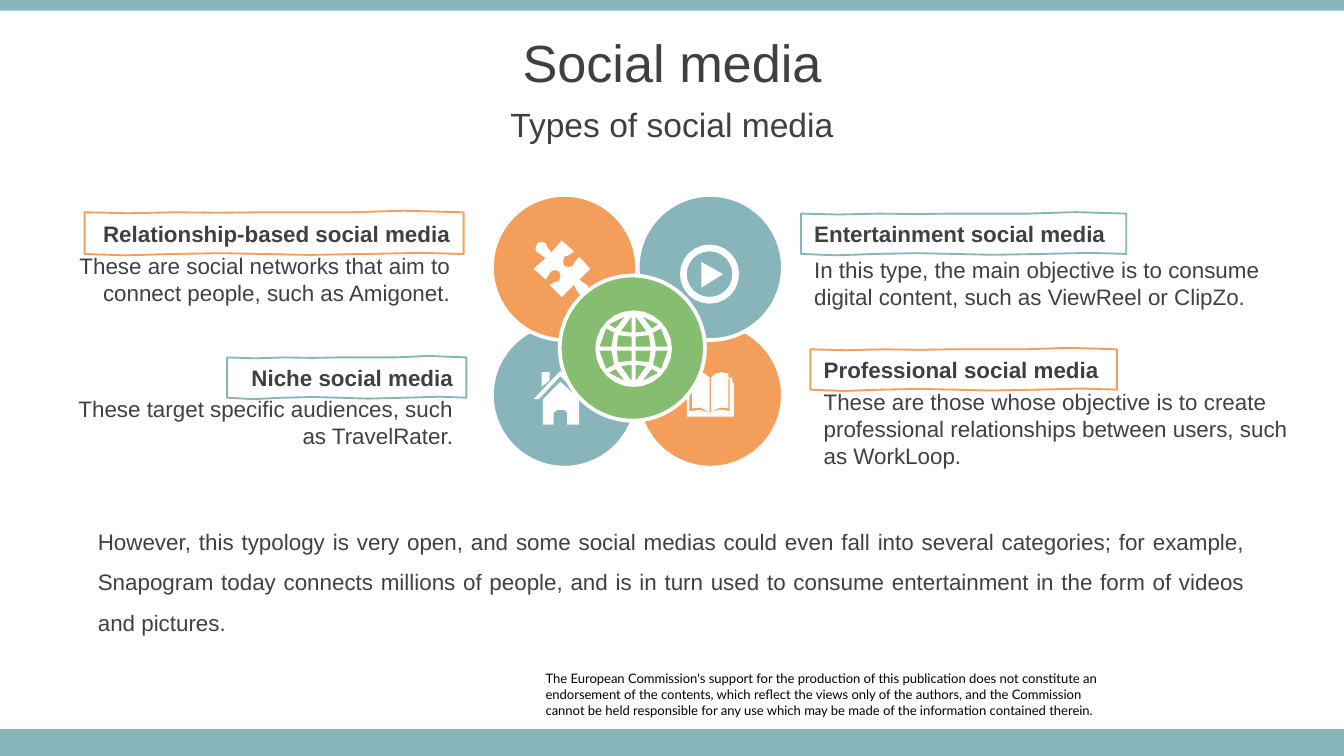
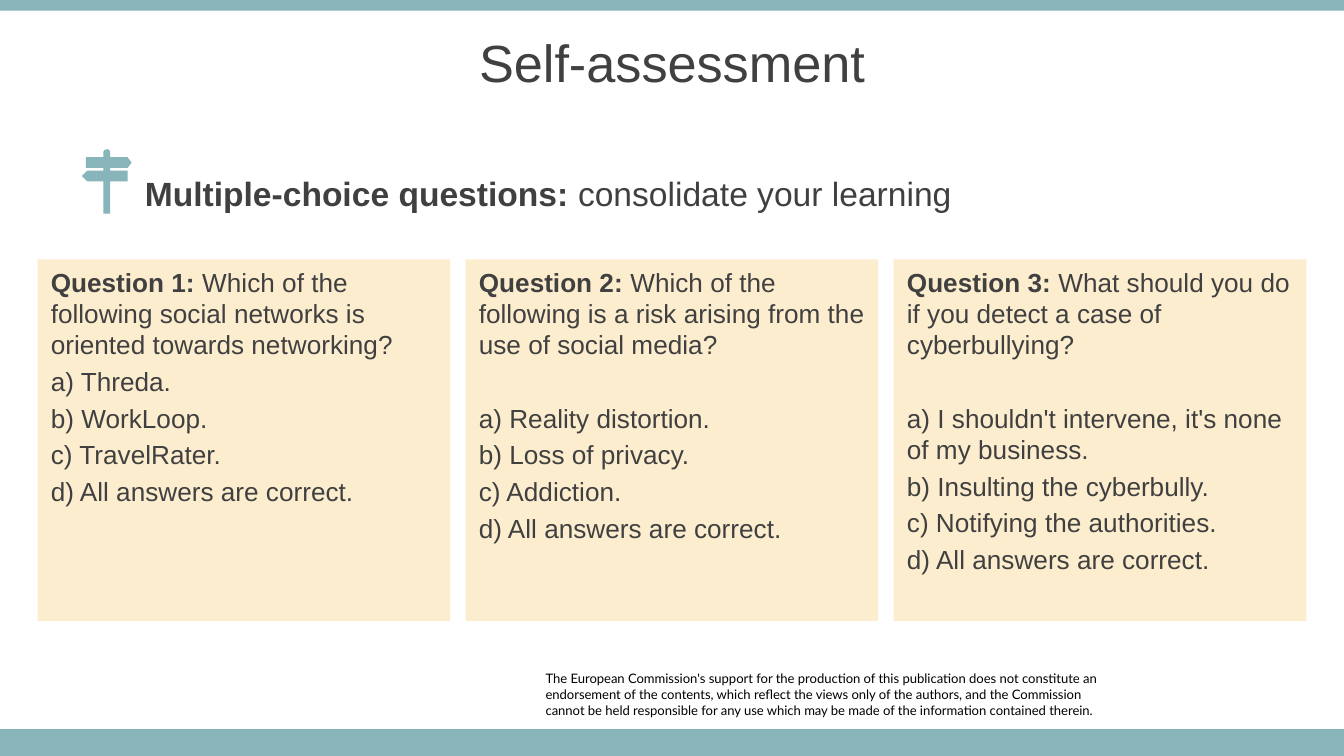
import math
from dataclasses import dataclass
from itertools import product

from pptx import Presentation
from pptx import util as u
from pptx.dml.color import RGBColor
from pptx.enum import shapes, text

TEAL = RGBColor(0x87, 0xB5, 0xBA)
ORANGE = RGBColor(0xF3, 0x9E, 0x5A)
GREEN = RGBColor(0x86, 0xBD, 0x70)
CREAM = RGBColor(0xFC, 0xED, 0xCF)
WHITE = RGBColor(0xFF, 0xFF, 0xFF)
BLACK = RGBColor(0, 0, 0)
GREY = RGBColor(0x40, 0x40, 0x40)

COLS, ROWS = 100, 56.25
CELL = u.Inches(10) // COLS
LEFT, CENTER, RIGHT, JUSTIFY = (text.PP_ALIGN.LEFT, text.PP_ALIGN.CENTER,
                                text.PP_ALIGN.RIGHT, text.PP_ALIGN.JUSTIFY)
TOP, MIDDLE = text.MSO_ANCHOR.TOP, text.MSO_ANCHOR.MIDDLE

Point = tuple[float, float]
Contour = list[Point]


@dataclass(frozen=True)
class Box:
    """A place on the slide, in grid columns and rows."""
    col: float
    row: float
    cols: float
    rows: float

    def emu(self) -> list[int]:
        return [round(v * CELL) for v in (self.col, self.row, self.cols, self.rows)]


@dataclass(frozen=True)
class MediaType:
    label: str
    detail: str
    frame: Box
    detail_box: Box
    color: RGBColor
    align: text.PP_ALIGN


@dataclass(frozen=True)
class Question:
    prompt: str
    answers: tuple[str, ...]
    gap: float = 2.8


@dataclass(frozen=True)
class Icon:
    col: float
    row: float
    contours: list[Contour]


def contours(path: str, steps: int = 2) -> list[Contour]:
    """Turn M, L and C commands into outlines, each curve as a few short lines."""
    result: list[Contour] = []
    tokens = iter(path.split())
    for cmd in tokens:
        pts = [(float(next(tokens)), float(next(tokens)))
               for _ in range(3 if cmd == "C" else 1)]
        if cmd == "M":
            result.append(pts)
        elif cmd == "L":
            result[-1] += pts
        else:
            a, (b, c, d) = result[-1][-1], pts
            for t in (i / steps for i in range(1, steps + 1)):
                s = 1 - t
                result[-1].append(tuple(
                    s**3 * a[k] + 3 * s * s * t * b[k] + 3 * s * t * t * c[k] + t**3 * d[k]
                    for k in (0, 1)))
    return result


def circle(center: float, radius: float) -> Contour:
    angles = [math.tau * i / 24 for i in range(24)]
    return [(center + radius * math.cos(a), center + radius * math.sin(a)) for a in angles]


def globe() -> list[Contour]:
    """A disc with the openings of one quarter mirrored to all four."""
    quarter = contours(
        "M 13.5 15 C 11.5 18 9.5 22 6.5 24 C 11.5 23 15.5 21 18.5 18 L 13.5 15 "
        "M 1.5 12 L 1.5 24 C 5.5 21 8.5 18 9.5 13 L 1.5 12 "
        "M 16.5 1.5 C 16.5 6 15.5 9 14.5 12 L 20.5 15 C 23.5 12 25 7 25.5 1.5 "
        "M 1.5 1.5 L 1.5 9 L 11.5 10 L 12.5 1.5", steps=1)
    holes = [[(28.5 + sx * x, 28.5 + sy * y) for x, y in hole]
             for sx, sy, hole in product((1, -1), (1, -1), quarter)]
    return [circle(28.5, 28.5)] + holes


# Icon outlines are in tenths of a grid cell.
BOOK = Icon(51.1, 27.7, contours(
    "M 18 30 L 17 30 C 11 28 8 27 2 29 L 2 5 L 4 5 L 4 27 C 8 25 12 26 17 30 L 17 4 "
    "C 14 1 12 0 9 0 L 4 1 L 4 4 L 1 4 L 1 8 L 0 8 L 0 33 L 35 33 L 35 8 L 34 8 "
    "L 34 4 L 31 4 L 31 1 L 26 0 C 23 0 20 1 18 4 L 18 30 C 22 26 27 25 31 27 "
    "L 31 5 L 32 5 L 32 29 C 26 26 23 28 18 30"))
PUZZLE = Icon(39.7, 17.9, contours(
    "M 3 2 C 1 4 1 7 2 8 C 4 11 7 10 9 13 L 0 21 L 9 29 C 12 27 10 25 13 23 "
    "C 15 21 17 22 19 23 C 20 24 21 27 19 30 C 16 32 15 30 12 33 L 21 42 L 30 33 "
    "C 33 36 31 37 33 39 C 35 41 38 41 40 39 C 41 38 42 35 40 33 C 38 31 36 32 34 29 "
    "L 42 21 L 34 12 C 30 14 32 17 29 19 C 27 20 25 20 23 19 C 22 17 21 14 23 12 "
    "C 26 10 27 12 30 8 L 21 0 L 13 9 C 10 6 11 5 9 2 C 7 0 4 1 3 2"))
HOUSE = Icon(39.7, 27.6, contours(
    "M 20 8 L 34 21 L 34 40 L 25 40 L 25 31 L 23 29 L 18 29 "
    "L 15 31 L 15 40 L 7 40 L 7 21 M 6 1 L 12 1 L 12 7 L 6 12 "
    "M 20 0 L 41 21 L 37 21 L 20 4 L 4 21 L 0 21"))
PLAY = Icon(50.6, 18.2, [circle(22, 22), circle(22, 17)] + contours("M 16 13 L 32 22 L 16 32"))
GLOBE = Icon(44.3, 23.1, globe())
SIGNPOST = Icon(6.1, 11.1, contours(
    "M 19 0 C 20 0 21 1 21 2 L 21 6 L 34 6 L 37 10 L 34 14 L 21 14 L 21 16 L 34 16 L 34 24 "
    "L 21 24 L 21 48 L 16 48 L 16 24 L 4 24 L 0 20 L 4 16 L 16 16 L 16 14 L 3 14 L 3 6 "
    "L 16 6 L 16 2 C 16 1 17 0 19 0"))
# Hand-drawn frame, in percent of its box.
WAVY_FRAME = contours(
    "M 0 0 C 6 3 17 3 24 0 C 31 -3 40 6 46 0 C 52 -6 60 6 70 0 C 80 -6 88 -4 100 0 "
    "L 100 100 C 93 98 86 95 74 100 C 61 106 56 100 47 100 "
    "C 38 100 34 95 23 100 C 12 105 9 104 0 100")

DISCLAIMER = [
    "The European Commission's support for the production of this publication does not "
    "constitute an endorsement of the contents, which reflect the views only of the authors, "
    "and the Commission",
    "cannot be held responsible for any use which may be made of the information contained "
    "therein."]

MEDIA_TYPES = [
    MediaType("Relationship-based social media",
              "These are social networks that aim to connect people, such as Amigonet.",
              Box(6.3, 15.8, 28.2, 3.1), Box(3.2, 18.3, 31.3, 5), ORANGE, RIGHT),
    MediaType("Entertainment social media",
              "In this type, the main objective is to consume digital content, such as "
              "ViewReel or ClipZo.",
              Box(59.6, 15.9, 24.2, 3), Box(59.6, 18.6, 37, 5), TEAL, LEFT),
    MediaType("Professional social media",
              "These are those whose objective is to create professional relationships "
              "between users, such as WorkLoop.",
              Box(60.3, 26, 22.8, 3), Box(60.3, 28.4, 38.1, 7.1), ORANGE, LEFT),
    MediaType("Niche social media",
              "These target specific audiences, such as TravelRater.",
              Box(16.9, 26.6, 17.8, 3), Box(2.8, 28.9, 31.9, 5), TEAL, RIGHT),
]

ALL_CORRECT = "All answers are correct."
QUESTIONS = [
    Question("Which of the following social networks is oriented towards networking?",
             ("Threda.", "WorkLoop.", "TravelRater.", ALL_CORRECT)),
    Question("Which of the following is a risk arising from the use of social media?",
             ("Reality distortion.", "Loss of privacy.", "Addiction.", ALL_CORRECT), 22.5),
    Question("What should you do if you detect a case of cyberbullying?",
             ("I shouldn't intervene, it's none of my business.", "Insulting the cyberbully.",
              "Notifying the authorities.", ALL_CORRECT), 22.5),
]


def write(sp, paragraphs, *, size=12, font="Arial", color=GREY, bold=False, align=LEFT,
          anchor=TOP, inset=None, line_spacing=None, gaps=()):
    """Fill a shape; a paragraph is a string or a list of (text, bold) runs."""
    tf = sp.text_frame
    tf.word_wrap, tf.vertical_anchor = True, anchor
    if inset is not None:
        tf.margin_left = tf.margin_right = tf.margin_top = tf.margin_bottom = inset
    for i, runs in enumerate(paragraphs):
        p = tf.paragraphs[0] if i == 0 else tf.add_paragraph()
        p.alignment = align
        if line_spacing:
            p.line_spacing = line_spacing
        if i and gaps:
            p.space_before = u.Pt(gaps[i - 1])
        for words, is_bold in [(runs, bold)] if isinstance(runs, str) else runs:
            r = p.add_run()
            r.text = words
            r.font.name, r.font.size, r.font.bold = font, u.Pt(size), is_bold
            r.font.color.rgb = color


def add_text(s, box: Box, paragraphs, **fmt):
    write(s.shapes.add_textbox(*box.emu()), paragraphs, **fmt)


def paint(sp, fill=None, line=None, width: float = 1):
    sp.shadow.inherit = False
    for part, color in ((sp.fill, fill), (sp.line.fill, line)):
        if color is None:
            part.background()
        else:
            part.solid()
            part.fore_color.rgb = color
    if line is not None:
        sp.line.width = u.Pt(width)


def add_preset(s, kind, box: Box, fill, line=None, width: float = 1):
    sp = s.shapes.add_shape(kind, *box.emu())
    paint(sp, fill, line, width)
    return sp


def add_outline(s, outline: list[Contour], box: Box, **look):
    """Draw contours from the corner of box, whose cols and rows span 100 units."""
    left, top, width, height = box.emu()
    placed = [[(round(left + x * width / 100), round(top + y * height / 100))
               for x, y in contour] for contour in outline]
    builder = s.shapes.build_freeform(*placed[0][0])
    builder.add_line_segments(placed[0][1:], close=True)
    for contour in placed[1:]:
        builder.move_to(*contour[0])
        builder.add_line_segments(contour[1:], close=True)
    sp = builder.convert_to_shape()
    paint(sp, **look)
    return sp


def add_icon(s, icon: Icon, color: RGBColor):
    add_outline(s, icon.contours, Box(icon.col, icon.row, 10, 10), fill=color)


def add_disc(s, col: float, row: float, color: RGBColor):
    add_preset(s, shapes.MSO_SHAPE.OVAL, Box(col, row, 10.8, 10.8), color, WHITE, 2)


def add_titled_slide(prs, title: str):
    s = prs.slides.add_slide(prs.slide_layouts[6])
    add_text(s, Box(40.6, 49.9, 41.7, 3.5), DISCLAIMER, size=7, font="Lato", color=BLACK, inset=0)
    for row, rows in ((ROWS - 2, 2), (0, 0.8)):
        add_preset(s, shapes.MSO_SHAPE.RECTANGLE, Box(0, row, COLS, rows), TEAL)
    add_text(s, Box(0, 1.4, COLS, 6.3), [title], size=28, align=CENTER, anchor=MIDDLE)
    return s


def social_media(prs):
    s = add_titled_slide(prs, "Social media")
    add_text(s, Box(0, 7.7, COLS, 3.1), ["Types of social media"],
             size=18, align=CENTER, anchor=MIDDLE)
    for i, j in product((1, 0), (1, 0)):
        add_disc(s, 36.6 + 10.85 * i, 14.5 + 9.5 * j, ORANGE if i == j else TEAL)
    for icon in (BOOK, PUZZLE, HOUSE, PLAY):
        add_icon(s, icon, WHITE)
    for kind in MEDIA_TYPES:
        add_text(s, kind.detail_box, [kind.detail], align=kind.align)
        frame = add_outline(s, WAVY_FRAME, kind.frame, line=kind.color)
        write(frame, [kind.label], bold=True, align=kind.align, anchor=MIDDLE)
    add_text(s, Box(6.3, 37.9, 87.4, 9.8), [
        "However, this typology is very open, and some social medias could even fall into "
        "several categories; for example, Snapogram today connects millions of people, and is "
        "in turn used to consume entertainment in the form of videos and pictures."],
        align=JUSTIFY, anchor=MIDDLE, line_spacing=1.5)
    add_disc(s, 41.65, 20.5, GREEN)
    add_icon(s, GLOBE, WHITE)


def self_assessment(prs):
    s = add_titled_slide(prs, "Self-assessment")
    add_text(s, Box(9.8, 12.8, 66.9, 3.1),
             [[("Multiple-choice questions: ", True), ("consolidate your learning", False)]],
             size=18, anchor=MIDDLE)
    add_icon(s, SIGNPOST, TEAL)
    for i, q in enumerate(QUESTIONS):
        card = add_preset(s, shapes.MSO_SHAPE.RECTANGLE,
                          Box(2.8 + 31.85 * i, 19.3, 30.7, 26.9), CREAM)
        answers = [f"{letter}) {answer}" for letter, answer in zip("abcd", q.answers)]
        write(card, [[(f"Question {i + 1}: ", True), (q.prompt, False)], *answers],
              size=14, gaps=(q.gap, 2.8, 2.8, 2.8))


def main():
    prs = Presentation()
    prs.slide_width, prs.slide_height = COLS * CELL, round(ROWS * CELL)
    social_media(prs)
    self_assessment(prs)
    prs.save("out.pptx")


if __name__ == "__main__":
    main()
